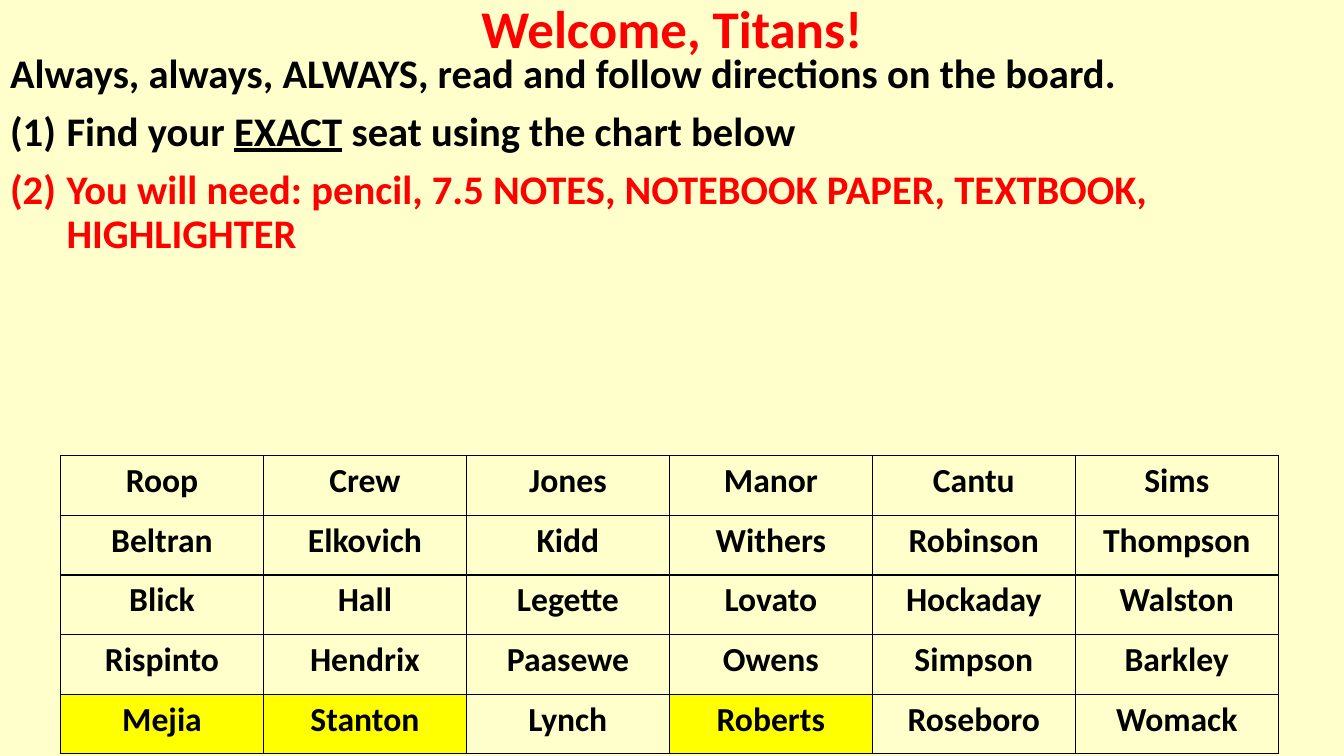
from dataclasses import dataclass

from pptx import Presentation
from pptx import util as u
from pptx.dml.color import RGBColor
from pptx.enum import text
from pptx.oxml import parse_xml
from pptx.oxml.ns import nsdecls


@dataclass(frozen=True)
class Theme:
    """Hold the colours, font and type sizes of the slide."""
    back: str = "FFFFCC"
    ink: str = "000000"
    alert: str = "FF0000"
    mark: str = "FFFF00"
    font: str = "Calibri"
    title: float = 37.8
    body: float = 29
    seat: float = 24
    rule: float = 1


THEME = Theme()
GREETING = "Welcome, Titans!"
STEPS = [
    (["Always, always, ALWAYS, read and follow directions on the board."], THEME.ink, False),
    (["Find your ", "EXACT", " seat using the chart below"], THEME.ink, True),
    (["You will need: pencil, 7.5 NOTES, NOTEBOOK PAPER, TEXTBOOK, HIGHLIGHTER"],
     THEME.alert, True),
]
SEATS = [
    ["Roop", "Crew", "Jones", "Manor", "Cantu", "Sims"],
    ["Beltran", "Elkovich", "Kidd", "Withers", "Robinson", "Thompson"],
    ["Blick", "Hall", "Legette", "Lovato", "Hockaday", "Walston"],
    ["Rispinto", "Hendrix", "Paasewe", "Owens", "Simpson", "Barkley"],
    ["Mejia", "Stanton", "Lynch", "Roberts", "Roseboro", "Womack"],
]
MARKED = {"Mejia", "Stanton", "Roberts"}


def style(run, size, color):
    """Give a run the bold face in the given size and colour."""
    font = run.font
    font.name, font.size, font.bold = THEME.font, u.Pt(size), True
    font.color.rgb = RGBColor.from_string(color)


def place(shape, box):
    """Move a placeholder to a box and fix its text size."""
    shape.left, shape.top, shape.width, shape.height = map(u.Inches, box)
    shape.text_frame.word_wrap = True
    shape.text_frame.auto_size = text.MSO_AUTO_SIZE.NONE


def add_title(slide, box):
    """Fill the title placeholder with the greeting."""
    title = slide.shapes.title
    place(title, box)
    frame = title.text_frame
    frame.text = GREETING
    frame.vertical_anchor = text.MSO_ANCHOR.BOTTOM
    para = frame.paragraphs[0]
    para.alignment, para.line_spacing = text.PP_ALIGN.CENTER, 0.9
    style(para.runs[0], THEME.title, THEME.alert)


def number(para):
    """Number a paragraph as (1), (2) with a hanging indent."""
    props = para._p.get_or_add_pPr()
    hang = u.Inches(0.56)
    props.set("marL", str(hang))
    props.set("indent", str(-hang))
    props.append(parse_xml(f'<a:buAutoNum {nsdecls("a")} type="arabicParenBoth"/>'))


def add_steps(slide, box):
    """Fill the body placeholder with the directions."""
    body = slide.placeholders[1]
    place(body, box)
    frame = body.text_frame
    frame.vertical_anchor = text.MSO_ANCHOR.TOP
    for index, (parts, color, listed) in enumerate(STEPS):
        para = frame.add_paragraph() if index else frame.paragraphs[0]
        para.alignment, para.line_spacing = text.PP_ALIGN.LEFT, 0.9
        para.space_before = u.Pt(10)
        if listed:
            number(para)
        for part in parts:
            run = para.add_run()
            run.text = part
            style(run, THEME.body, color)
            if part == "EXACT":
                run.font.underline = True


def border(cell):
    """Draw a thin rule on all four sides of a cell."""
    props = cell._tc.get_or_add_tcPr()
    for side in "LRTB":
        props.append(parse_xml(
            f'<a:ln{side} {nsdecls("a")} w="{u.Pt(THEME.rule)}"><a:solidFill>'
            f'<a:srgbClr val="{THEME.ink}"/></a:solidFill></a:ln{side}>'))


def add_chart(slide, box):
    """Add the seating chart as an even grid that fills the box."""
    left, top, width, height = map(u.Inches, box)
    rows, cols = len(SEATS), len(SEATS[0])
    table = slide.shapes.add_table(rows, cols, left, top, width, height).table
    table.first_row = table.horz_banding = False
    for row, names in zip(table.rows, SEATS):
        for cell, name in zip(row.cells, names):
            border(cell)
            if name in MARKED:
                cell.fill.solid()
                cell.fill.fore_color.rgb = RGBColor.from_string(THEME.mark)
            else:
                cell.fill.background()
            cell.text_frame.text = name
            para = cell.text_frame.paragraphs[0]
            para.alignment = text.PP_ALIGN.CENTER
            style(para.runs[0], THEME.seat, THEME.ink)


def main():
    """Build the welcome slide and save it."""
    deck = Presentation()
    deck.slide_width, deck.slide_height = u.Inches(13.33), u.Inches(7.5)
    slide = deck.slides.add_slide(deck.slide_layouts[0])
    fill = slide.background.fill
    fill.solid()
    fill.fore_color.rgb = RGBColor.from_string(THEME.back)
    add_title(slide, (0, 0, 13.33, 0.64))
    add_steps(slide, (0, 0.48, 13.33, 4.04))
    add_chart(slide, (0.6, 4.52, 12.08, 2.96))
    deck.save("out.pptx")


if __name__ == "__main__":
    main()
